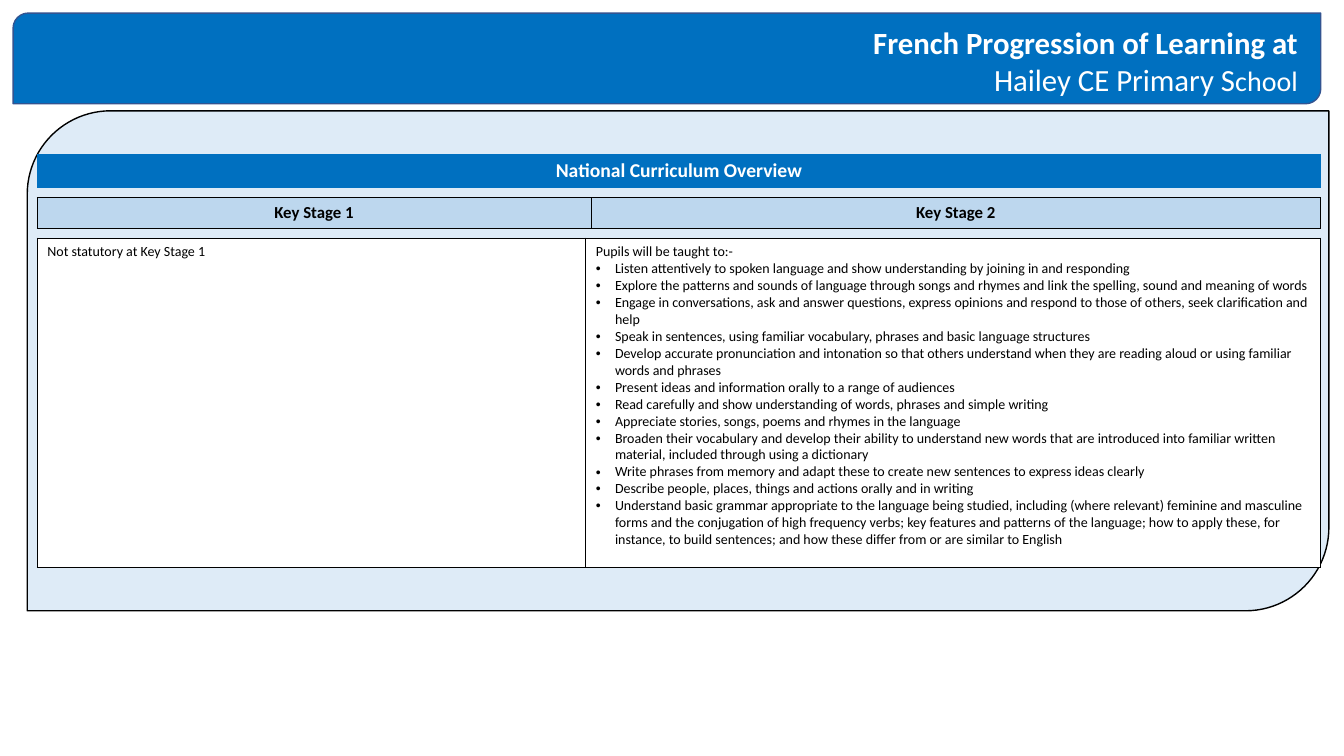
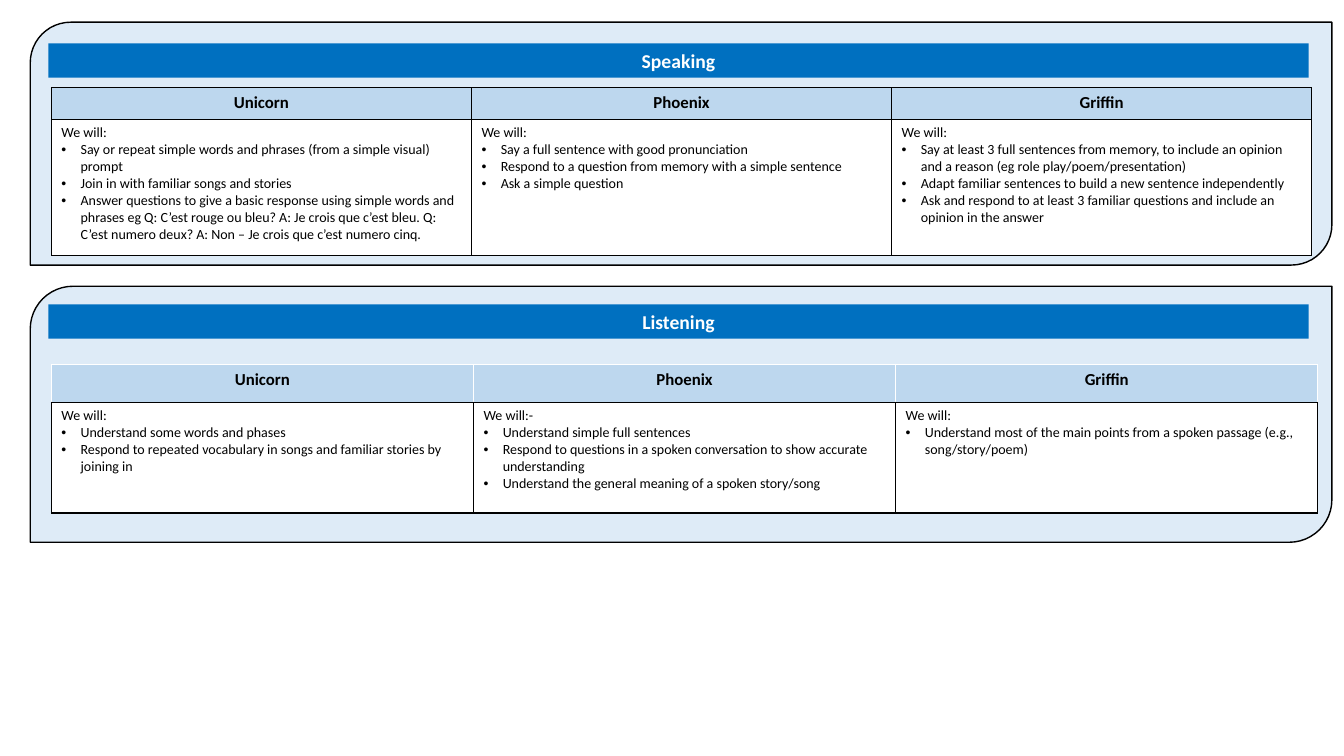
from lxml.etree import SubElement
from pptx import Presentation
from pptx.dml.color import RGBColor
from pptx.enum.shapes import MSO_SHAPE
from pptx.enum.text import MSO_ANCHOR, PP_ALIGN
from pptx.oxml.ns import qn
from pptx.util import Inches, Pt

BLUE = RGBColor(0x00, 0x70, 0xC0)
NAVY = RGBColor(0x32, 0x54, 0x91)
PALE = RGBColor(0xDE, 0xEB, 0xF7)
SKY = RGBColor(0xBD, 0xD7, 0xEE)
WHITE = RGBColor(0xFF, 0xFF, 0xFF)
BLACK = RGBColor(0x00, 0x00, 0x00)
FONT = "Calibri"

STAGES = ["Key Stage 1", "Key Stage 2"]
AIMS = [
    ["Not statutory at Key Stage 1"],
    ["Pupils will be taught to:-",
     "Listen attentively to spoken language and show understanding by joining in and responding",
     "Explore the patterns and sounds of language through songs and rhymes and link the spelling, "
     "sound and meaning of words",
     "Engage in conversations, ask and answer questions, express opinions and respond to those of "
     "others, seek clarification and help",
     "Speak in sentences, using familiar vocabulary, phrases and basic language structures",
     "Develop accurate pronunciation and intonation so that others understand when they are "
     "reading aloud or using familiar words and phrases",
     "Present ideas and information orally to a range of audiences",
     "Read carefully and show understanding of words, phrases and simple writing",
     "Appreciate stories, songs, poems and rhymes in the language",
     "Broaden their vocabulary and develop their ability to understand new words that are "
     "introduced into familiar written material, included through using a dictionary",
     "Write phrases from memory and adapt these to create new sentences to express ideas clearly",
     "Describe people, places, things and actions orally and in writing",
     "Understand basic grammar appropriate to the language being studied, including (where "
     "relevant) feminine and masculine forms and the conjugation of high frequency verbs; key "
     "features and patterns of the language; how to apply these, for instance, to build "
     "sentences; and how these differ from or are similar to English"],
]
GROUPS = ["Unicorn", "Phoenix", "Griffin"]
SPEAK = [
    ["We will:",
     "Say or repeat simple words and phrases (from a simple visual) prompt",
     "Join in with familiar songs and stories",
     "Answer questions to give a basic response using simple words and phrases eg Q: C’est rouge "
     "ou bleu? A: Je crois que c’est bleu. Q: C’est numero deux? A: Non – Je crois que c’est "
     "numero cinq."],
    ["We will:",
     "Say a full sentence with good pronunciation",
     "Respond to a question from memory with a simple sentence",
     "Ask a simple question"],
    ["We will:",
     "Say at least 3 full sentences from memory, to include an opinion and a reason "
     "(eg role play/poem/presentation)",
     "Adapt familiar sentences to build a new sentence independently",
     "Ask and respond to at least 3 familiar questions and include an opinion in the answer"],
]
LISTEN = [
    ["We will:",
     "Understand some words and phases",
     "Respond to repeated vocabulary in songs and familiar stories by joining in"],
    ["We will:-",
     "Understand simple full sentences",
     "Respond to questions in a spoken conversation to show accurate understanding",
     "Understand the general meaning of a spoken story/song"],
    ["We will:",
     "Understand most of the main points from a spoken passage (e.g., song/story/poem)"],
]


def write(para, text, size=10, color=BLACK, bold=False, align=None, bullet=False):
    """Add one run to a paragraph, with its format."""
    if bullet:
        props = para._p.get_or_add_pPr()
        props.set("marL", str(Inches(0.19)))
        props.set("indent", str(Inches(-0.19)))
        SubElement(props, qn("a:buFont"), typeface="Arial")
        SubElement(props, qn("a:buChar"), char="•")
    if align is not None:
        para.alignment = align
    run = para.add_run()
    run.text = text
    font = run.font
    font.name, font.size, font.bold = FONT, Pt(size), bold
    font.color.rgb = color


def edge(cell, sides):
    """Draw cell borders; sides maps L, R, T, B to (colour, width) or None."""
    props = cell._tc.get_or_add_tcPr()
    for side in "LRTB":
        line = SubElement(props, qn("a:ln" + side))
        if sides[side] is None:
            SubElement(line, qn("a:noFill"))
            continue
        color, width = sides[side]
        line.set("w", str(Pt(width)))
        fill = SubElement(line, qn("a:solidFill"))
        SubElement(fill, qn("a:srgbClr"), val=str(color))


class Deck:
    """Holds the style and the current slide."""

    def __init__(self):
        self.prs = Presentation()
        self.prs.slide_width = Inches(13.33)
        self.prs.slide_height = Inches(7.5)
        self.slide = None

    def page(self):
        self.slide = self.prs.slides.add_slide(self.prs.slide_layouts[6])

    def shape(self, kind, box, fill, line=None):
        item = self.slide.shapes.add_shape(kind, *map(Inches, box))
        item.shadow.inherit = False
        item.fill.solid()
        item.fill.fore_color.rgb = fill
        if line is None:
            item.line.fill.background()
        else:
            item.line.color.rgb = line
            item.line.width = Pt(1)
        return item

    def panel(self, box, fill=PALE, line=BLACK):
        self.shape(MSO_SHAPE.ROUND_2_DIAG_RECTANGLE, box, fill, line)

    def band(self, text, top):
        item = self.shape(MSO_SHAPE.RECTANGLE, (0.48, top, 12.5, 0.34), BLUE)
        frame = item.text_frame
        frame.vertical_anchor = MSO_ANCHOR.MIDDLE
        write(frame.paragraphs[0], text, size=14, color=WHITE, bold=True,
              align=PP_ALIGN.CENTER)

    def title(self, first, second, tail):
        box = self.slide.shapes.add_textbox(*map(Inches, (6.42, 0.19, 6.55, 0.84)))
        frame = box.text_frame
        frame.word_wrap = True
        write(frame.paragraphs[0], first, size=22, color=WHITE, bold=True,
              align=PP_ALIGN.RIGHT)
        para = frame.add_paragraph()
        write(para, second, size=22, color=WHITE, align=PP_ALIGN.RIGHT)
        write(para, tail, size=20, color=WHITE)

    def grid(self, left, top, cols, rows):
        """Add a plain table with the given column widths and row heights."""
        size = map(Inches, (left, top, sum(cols), sum(rows)))
        table = self.slide.shapes.add_table(len(rows), len(cols), *size).table
        table.first_row = table.horz_banding = False
        for col, width in zip(table.columns, cols):
            col.width = Inches(width)
        for row, height in zip(table.rows, rows):
            row.height = Inches(height)
        return table

    def cell(self, cell, fill, sides):
        edge(cell, sides)
        cell.fill.solid()
        cell.fill.fore_color.rgb = fill
        return cell.text_frame

    def heads(self, table, names, sides, fill=SKY, size=12, color=BLACK):
        for col, name in enumerate(names):
            frame = self.cell(table.cell(0, col), fill, sides)
            write(frame.paragraphs[0], name, size=size, color=color, bold=True,
                  align=PP_ALIGN.CENTER)

    def body(self, table, row, texts, sides):
        """Fill a row: each cell has a lead line, then bullets."""
        for col, (lead, *points) in enumerate(texts):
            frame = self.cell(table.cell(row, col), WHITE, sides)
            write(frame.paragraphs[0], lead)
            for point in points:
                write(frame.add_paragraph(), point, bullet=True)


def main():
    deck = Deck()
    none = dict.fromkeys("LRTB")
    thin = dict.fromkeys("LRTB", (BLACK, 0.5))
    thick = dict.fromkeys("LRTB", (BLACK, 1))
    light = dict.fromkeys("LRT", (WHITE, 1)) | {"B": (BLACK, 1)}

    # Curriculum overview
    deck.page()
    deck.panel((0.13, 0.13, 12.97, 0.9), BLUE, NAVY)
    deck.title("French Progression of Learning at", "Hailey CE Primary S", "chool")
    deck.panel((0.27, 1.1, 12.91, 4.96))
    table = deck.grid(0.37, 1.53, [12.73], [0.33])
    deck.heads(table, ["National Curriculum Overview"], none, BLUE, 14, WHITE)
    table = deck.grid(0.37, 1.96, [5.49, 7.24], [0.3])
    deck.heads(table, STAGES, thin)
    table = deck.grid(0.37, 2.36, [5.44, 7.29], [3.27])
    deck.body(table, 0, AIMS, thin)

    # Speaking and listening
    deck.page()
    skills = [
        ("Speaking", 0.22, 2.41, 0.43, 0.87, 12.5, [0.31, 1.35], SPEAK, thin, thin),
        ("Listening", 2.84, 2.54, 3.02, 3.62, 12.56, [0.37, 1.1], LISTEN, light, thick),
    ]
    for name, top, high, band, start, wide, rows, texts, upper, lower in skills:
        deck.panel((0.3, top, 12.91, high))
        deck.band(name, band)
        table = deck.grid(0.51, start, [wide / 3] * 3, rows)
        deck.heads(table, GROUPS, upper)
        deck.body(table, 1, texts, lower)

    deck.prs.save("out.pptx")


if __name__ == "__main__":
    main()
